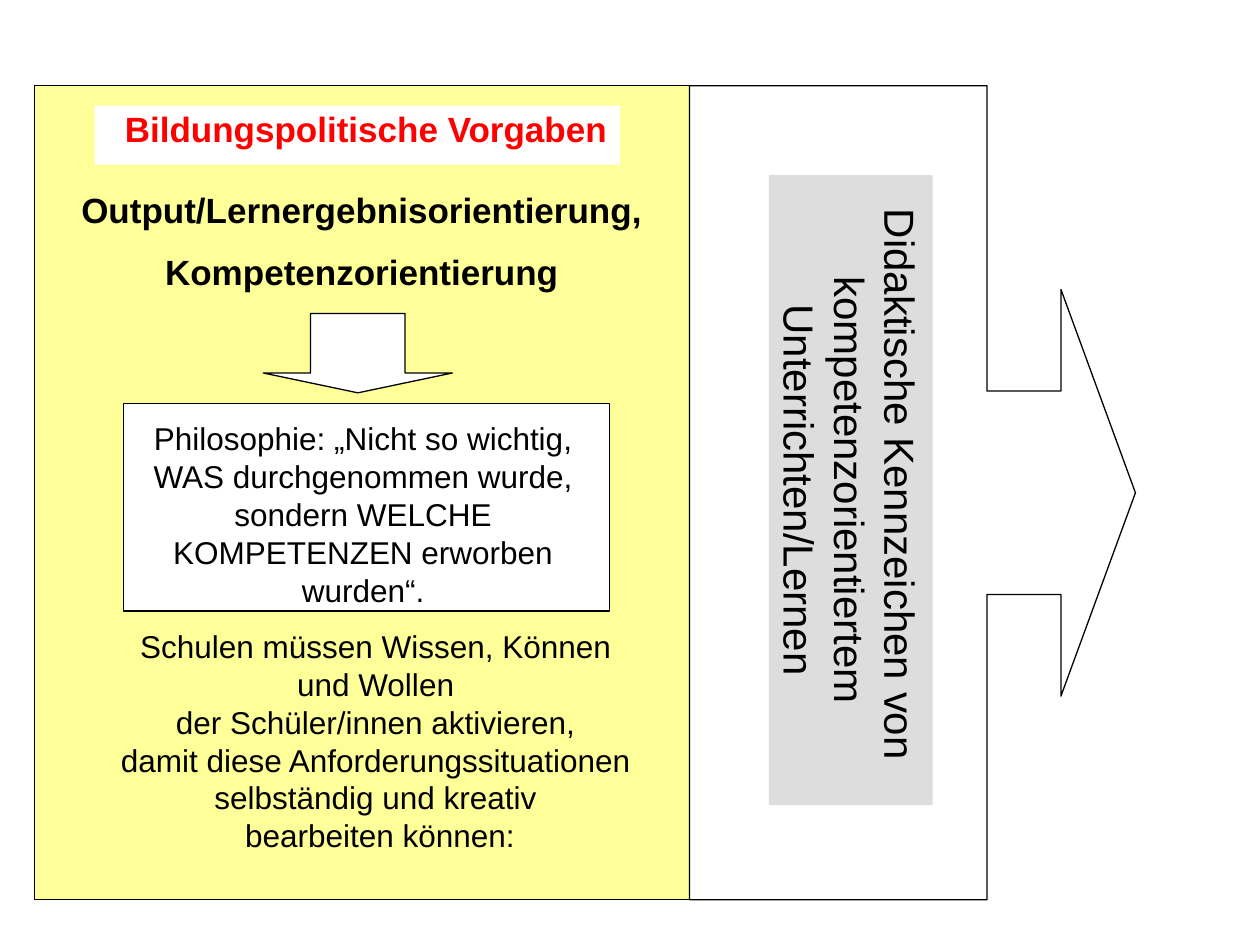
import pptx
import pptx.dml.color
import pptx.enum.shapes
import pptx.enum.text
import pptx.util

Cm = pptx.util.Cm
Pt = pptx.util.Pt
SHAPE = pptx.enum.shapes.MSO_SHAPE

COLORS = {
    "panel": "FFFF99",
    "paper": "FFFFFF",
    "label": "DDDDDD",
    "ink": "000000",
    "accent": "FF0000",
}


class SlideBuilder:
    """Holds the style and the current slide and adds its elements."""

    font_name = "Arial"
    line_width = Pt(0.75)

    def __init__(self, slide):
        self.slide = slide

    def color(self, name):
        return pptx.dml.color.RGBColor.from_string(COLORS[name])

    def shape(self, kind, box, fill, outlined=True, adjustments=()):
        shape = self.slide.shapes.add_shape(kind, *map(Cm, box))
        shape.shadow.inherit = False
        shape.fill.solid()
        shape.fill.fore_color.rgb = self.color(fill)
        if outlined:
            shape.line.color.rgb = self.color("ink")
            shape.line.width = self.line_width
        else:
            shape.line.fill.background()
        for index, value in enumerate(adjustments):
            shape.adjustments[index] = value
        return shape

    def fill_text(self, shape, lines, size, color="ink", bold=False, gap=0, wrap=True):
        frame = shape.text_frame
        frame.word_wrap = wrap
        frame.vertical_anchor = pptx.enum.text.MSO_ANCHOR.TOP
        for index, line in enumerate(lines):
            paragraph = frame.add_paragraph() if index else frame.paragraphs[0]
            paragraph.alignment = pptx.enum.text.PP_ALIGN.CENTER
            paragraph.space_before = Pt(gap if index else 0)
            run = paragraph.add_run()
            run.text = line
            run.font.name = self.font_name
            run.font.size = Pt(size)
            run.font.bold = bold
            run.font.color.rgb = self.color(color)

    def text(self, box, lines, size, **style):
        textbox = self.slide.shapes.add_textbox(*map(Cm, box))
        self.fill_text(textbox, lines, size, **style)

    def title(self, box, text, size, **style):
        title = self.slide.shapes.title
        title.left, title.top, title.width, title.height = map(Cm, box)
        self.fill_text(title, [text], size, **style)
        title.element.getparent().append(title.element)


def main():
    """Build the slide on competence orientation and save it."""
    deck = pptx.Presentation()
    deck.slide_width, deck.slide_height = Cm(25.4), Cm(19.05)
    builder = SlideBuilder(deck.slides.add_slide(deck.slide_layouts[5]))

    panel_top, panel_height = 1.73, 16.41
    builder.shape(SHAPE.RECTANGLE, (0.69, panel_top, 13.21, panel_height), "panel")
    builder.shape(SHAPE.RECTANGLE, (2.49, 8.13, 9.8, 4.19), "paper")
    builder.text(
        (1.3, 3.68, 11.99, 3.63),
        ["Output/Lernergebnisorientierung,", "Kompetenzorientierung"],
        20, bold=True, gap=11.5,
    )
    builder.shape(SHAPE.DOWN_ARROW, (5.31, 6.32, 3.81, 1.6), "paper",
                  adjustments=(0.5, 0.25))
    builder.text(
        (2.29, 8.33, 10.06, 4.06),
        ["Philosophie: „Nicht so wichtig, WAS durchgenommen wurde, "
         "sondern WELCHE KOMPETENZEN erworben wurden“."],
        18,
    )
    builder.text(
        (2.16, 12.52, 11, 5.59),
        [
            "Schulen müssen Wissen, Können ",
            "und Wollen ",
            "der Schüler/innen aktivieren, ",
            "damit diese Anforderungssituationen ",
            "selbständig und kreativ ",
            "bearbeiten können:",
        ],
        18, wrap=False,
    )

    builder.shape(SHAPE.RIGHT_ARROW_CALLOUT, (13.9, panel_top, 8.99, panel_height),
                  "paper", adjustments=(0.456, 0.456, 0.167, 0.667))
    didactics = builder.shape(SHAPE.RECTANGLE, (10.8, 8.23, 12.7, 3.3), "label",
                              outlined=False)
    didactics.rotation = 90
    builder.fill_text(
        didactics,
        ["Didaktische Kennzeichen von ", "kompetenzorientiertem Unterrichten/Lernen"],
        24,
    )

    builder.shape(SHAPE.RECTANGLE, (1.91, 2.13, 10.59, 1.19), "paper", outlined=False)
    builder.title((1.5, 2.03, 11.76, 1.09), "Bildungspolitische Vorgaben", 20,
                  color="accent", bold=True)
    deck.save("out.pptx")


if __name__ == "__main__":
    main()
